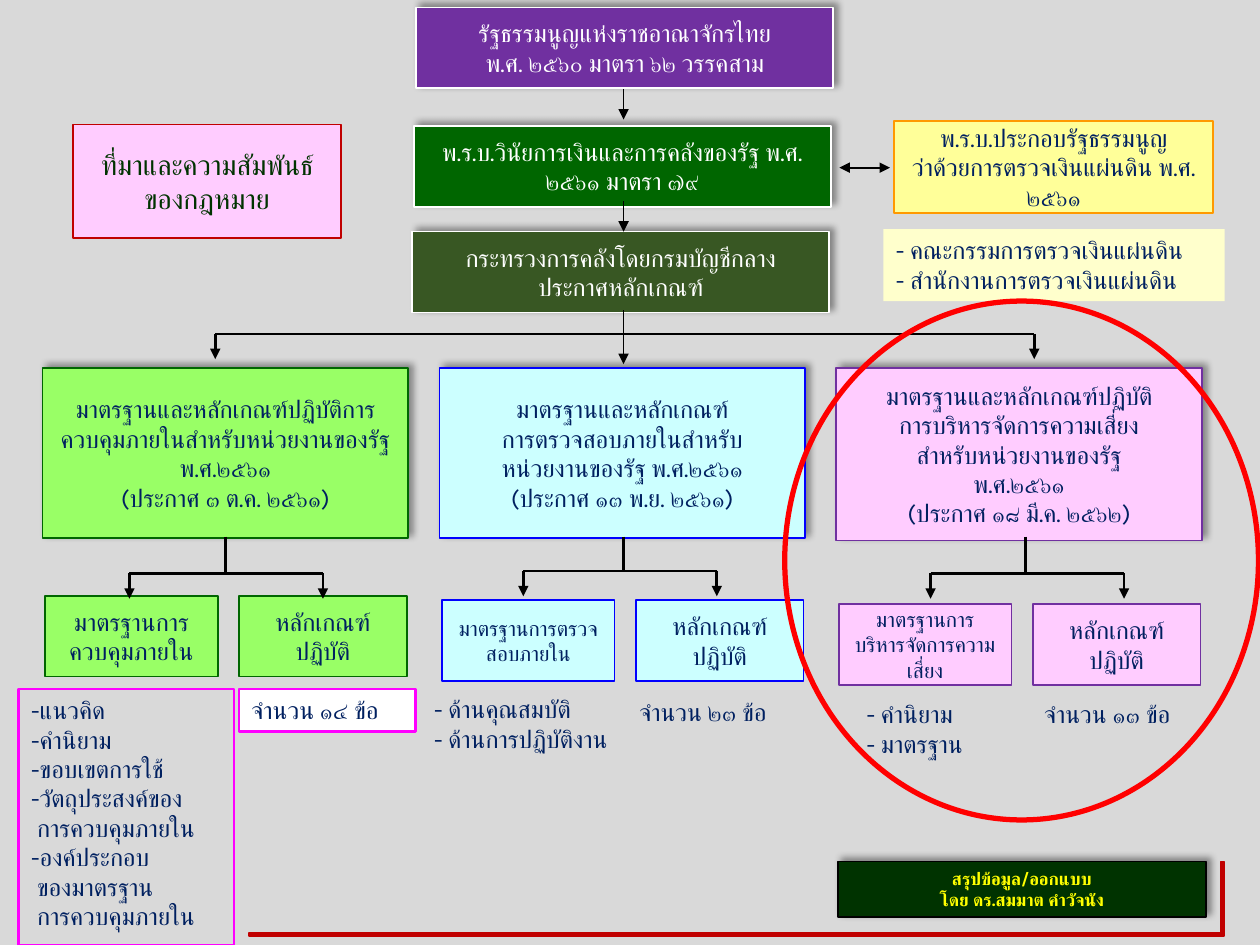
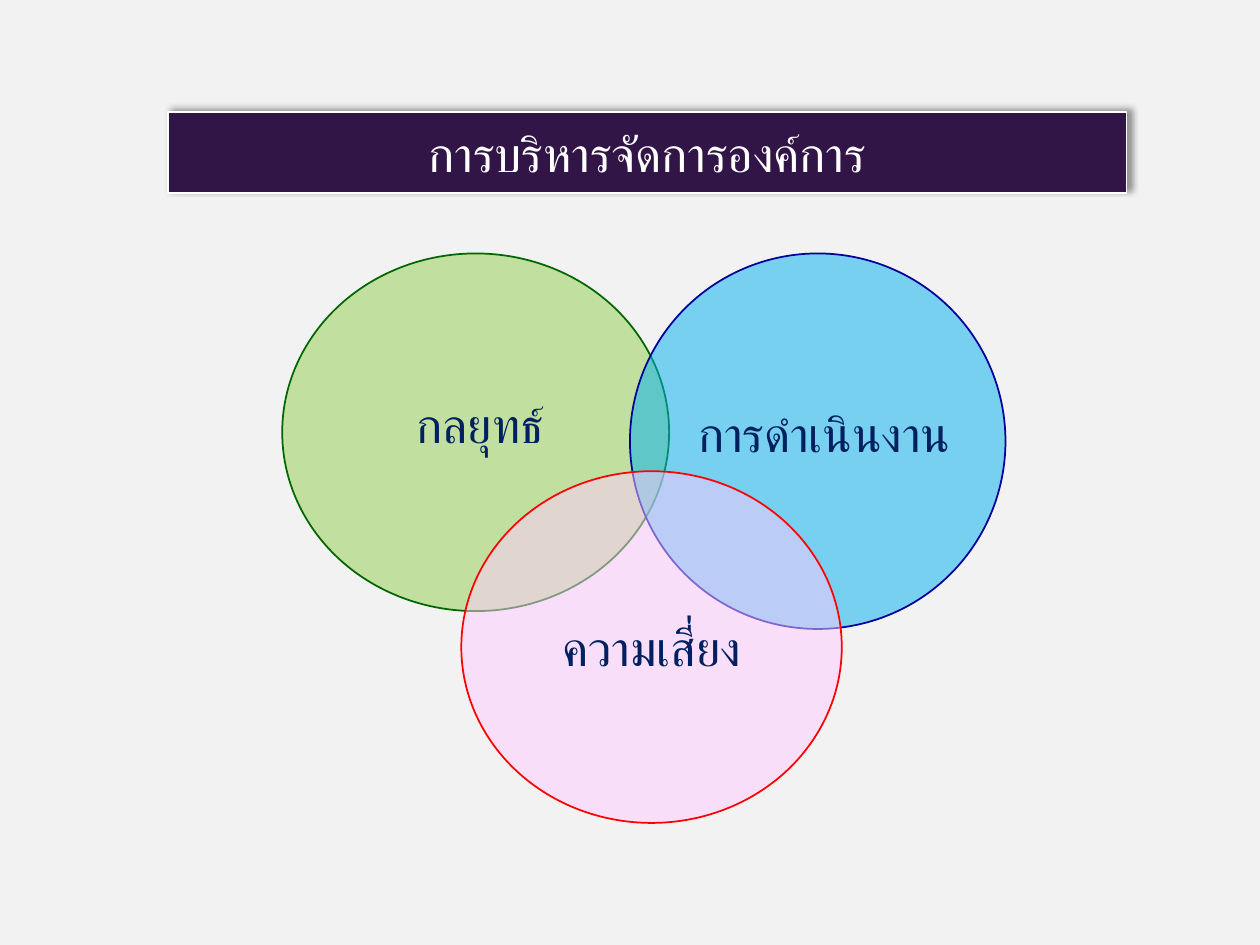
from lxml import etree
from pptx import Presentation
from pptx.dml.color import RGBColor
from pptx.enum.shapes import MSO_CONNECTOR, MSO_SHAPE as SHAPE
from pptx.enum.text import MSO_ANCHOR as ANCHOR, MSO_AUTO_SIZE, PP_ALIGN as ALIGN
from pptx.oxml.ns import qn
from pptx.util import Cm, Pt

FONT = "Karla"
TITLE_ONLY = 5
BLACK = RGBColor(0x00, 0x00, 0x00)
WHITE = RGBColor(0xFF, 0xFF, 0xFF)
GREY = RGBColor(0xD9, 0xD9, 0xD9)
PALE_GREY = RGBColor(0xF2, 0xF2, 0xF2)
NAVY = RGBColor(0x00, 0x20, 0x60)
BLUE = RGBColor(0x00, 0x00, 0xFF)
DARK_BLUE = RGBColor(0x00, 0x00, 0x99)
SKY = RGBColor(0x00, 0xB0, 0xF0)
PALE_CYAN = RGBColor(0xCC, 0xFF, 0xFF)
GREEN = RGBColor(0x00, 0x66, 0x00)
DARK_GREEN = RGBColor(0x00, 0x33, 0x00)
OLIVE = RGBColor(0x38, 0x57, 0x23)
LIME = RGBColor(0x99, 0xFF, 0x66)
LEAF = RGBColor(0x92, 0xD0, 0x50)
PURPLE = RGBColor(0x70, 0x30, 0xA0)
PLUM = RGBColor(0x32, 0x15, 0x47)
PINK = RGBColor(0xFF, 0xCC, 0xFF)
MAGENTA = RGBColor(0xFF, 0x00, 0xFF)
RED = RGBColor(0xFF, 0x00, 0x00)
DARK_RED = RGBColor(0xC0, 0x00, 0x00)
ORANGE = RGBColor(0xFF, 0x99, 0x00)
YELLOW = RGBColor(0xFF, 0xFF, 0x00)
LIGHT_YELLOW = RGBColor(0xFF, 0xFF, 0x99)
CREAM = RGBColor(0xFF, 0xFF, 0xCC)

CENTRE_X = 12.57
COLUMN_LEFT, COLUMN_PITCH, COLUMN_WIDTH, COLUMN_TOP = 0.86, 8.0, 7.37, 7.42
CHILD_HEIGHT, FORK_WIDTH, FORK_DROP = 1.63, 3.9, 0.51

COLUMNS = [
    dict(
        fill=LIME, line=GREEN, height=3.43, trunk=3.68, fork=1.75, bar=11.56,
        child_top=12.01, size=14,
        head="มาตรฐานและหลักเกณฑ์ปฏิบัติการควบคุมภายในสำหรับหน่วยงานของรัฐ พ.ศ.๒๕๖๑\n"
             "(ประกาศ ๓ ต.ค. ๒๕๖๑)",
        standard="มาตรฐานการควบคุมภายใน",
        notes="-แนวคิด\n-คำนิยาม\n-ขอบเขตการใช้\n-วัตถุประสงค์ของ\n การควบคุมภายใน\n"
              "-องค์ประกอบ\n ของมาตรฐาน\n การควบคุมภายใน",
        notes_box=(-0.48, 13.89, 4.34, 5.16), notes_line=MAGENTA,
        count="จำนวน ๑๔ ข้อ", count_box=(3.96, 13.89, 3.56, 0.86), count_fill=WHITE),
    dict(
        fill=PALE_CYAN, line=BLUE, height=3.43, trunk=3.71, fork=1.69, bar=11.51,
        child_top=12.1, size=12,
        head="มาตรฐานและหลักเกณฑ์\nการตรวจสอบภายในสำหรับ\n"
             "หน่วยงานของรัฐ พ.ศ.๒๕๖๑\n(ประกาศ ๑๓ พ.ย. ๒๕๖๑)",
        standard="มาตรฐานการตรวจสอบภายใน",
        notes="- ด้านคุณสมบัติ\n- ด้านการปฏิบัติงาน",
        notes_box=(-0.36, 13.87, 4.62, 1.5), notes_line=None,
        count="จำนวน ๒๓ ข้อ", count_box=(3.78, 13.92, 3.58, 0.86), count_fill=None),
    dict(
        fill=PINK, line=PURPLE, height=3.48, trunk=3.81, fork=1.9, bar=11.56,
        child_top=12.18, size=12,
        head="มาตรฐานและหลักเกณฑ์ปฏิบัติ\nการบริหารจัดการความเสี่ยง\n"
             "สำหรับหน่วยงานของรัฐ\nพ.ศ.๒๕๖๑\n(ประกาศ ๑๘ มี.ค. ๒๕๖๒)",
        standard="มาตรฐานการบริหารจัดการความเสี่ยง",
        notes="- คำนิยาม\n- มาตรฐาน",
        notes_box=(0.36, 13.97, 2.79, 1.5), notes_line=None,
        count="จำนวน ๑๓ ข้อ", count_box=(3.94, 13.97, 3.71, 0.86), count_fill=None),
]


def add_shadow(sp):
    """Give a shape the soft shadow that falls to the upper right."""
    effects = sp._element.spPr.find(qn("a:effectLst"))
    outer = etree.SubElement(effects, qn("a:outerShdw"), blurRad="50800", dist="38100",
                             dir="18900000", algn="bl", rotWithShape="0")
    color = etree.SubElement(outer, qn("a:srgbClr"), val="000000")
    etree.SubElement(color, qn("a:alpha"), val="40000")


def paint(sp, fill=None, line=None, width=1, shadow=False):
    """Set fill, outline and shadow of a shape."""
    if fill is None:
        sp.fill.background()
    else:
        sp.fill.solid()
        sp.fill.fore_color.rgb = fill
    if line is None:
        sp.line.fill.background()
    else:
        sp.line.color.rgb = line
        sp.line.width = Pt(width)
    sp.shadow.inherit = False
    if shadow:
        add_shadow(sp)


def write(sp, text, size=14, color=NAVY, align=ALIGN.CENTER, anchor=ANCHOR.MIDDLE, bold=False):
    """Fill a shape with text, one paragraph for each line."""
    tf = sp.text_frame
    tf.text = text
    tf.word_wrap = True
    tf.auto_size = MSO_AUTO_SIZE.NONE
    tf.vertical_anchor = anchor
    for p in tf.paragraphs:
        p.alignment = align
        for r in p.runs:
            r.font.name = FONT
            r.font.size = Pt(size)
            r.font.bold = bold
            r.font.color.rgb = color
            etree.SubElement(r._r.get_or_add_rPr(), qn("a:cs"), typeface=FONT)


def add_box(s, box, fill=None, line=None, kind=SHAPE.RECTANGLE, width=1, shadow=False):
    """Add a painted preset shape at a box given in centimetres."""
    sp = s.shapes.add_shape(kind, *map(Cm, box))
    paint(sp, fill, line, width, shadow)
    return sp


def add_note(s, box, text, fill=None, line=None):
    """Add a left-aligned list that starts at the top of its box."""
    sp = add_box(s, box, fill, line, width=1.5)
    write(sp, text, align=ALIGN.LEFT, anchor=ANCHOR.TOP)


def add_line(s, x1, y1, x2, y2, width=1.5, ends=()):
    """Add a black line with arrowheads at the named ends."""
    cxn = s.shapes.add_connector(MSO_CONNECTOR.STRAIGHT, *map(Cm, (x1, y1, x2, y2)))
    cxn.line.color.rgb = BLACK
    cxn.line.width = Pt(width)
    for end in ends:
        etree.SubElement(cxn.get_or_add_ln(), qn(f"a:{end}"), type="triangle")
    etree.SubElement(cxn._element.spPr, qn("a:effectLst"))


def add_fork(s, left, right, bar, drop=FORK_DROP):
    """Add a bar with an arrow down from each end."""
    add_line(s, left, bar, right, bar)
    for x in (left, right):
        add_line(s, x, bar, x, bar + drop, ends=["tailEnd"])


def format_title(s, box, geometry, adjustments, text, size, color, fill, line, shadow=False):
    """Move the title placeholder and give it a preset outline."""
    sp = s.shapes.title
    sp.left, sp.top, sp.width, sp.height = map(Cm, box)
    geom = etree.Element(qn("a:prstGeom"), prst=geometry)
    guides = etree.SubElement(geom, qn("a:avLst"))
    for name, value in adjustments.items():
        etree.SubElement(guides, qn("a:gd"), name=name, fmla=f"val {value}")
    sp._element.spPr.insert(1, geom)
    paint(sp, fill, line, shadow=shadow)
    write(sp, text, size, color)


def add_law_chain(s, left, top):
    """Stack the constitution, the act and the ministry with arrows between."""
    laws = [
        (0.08, 0, PURPLE, "รัฐธรรมนูญแห่งราชอาณาจักรไทย\nพ.ศ. ๒๕๖๐ มาตรา ๖๒ วรรคสาม"),
        (0.03, 2.39, GREEN, "พ.ร.บ.วินัยการเงินและการคลังของรัฐ พ.ศ. ๒๕๖๑ มาตรา ๗๙"),
        (0, 4.52, OLIVE, "กระทรวงการคลังโดยกรมบัญชีกลาง\nประกาศหลักเกณฑ์"),
    ]
    for dx, dy, fill, text in laws:
        sp = add_box(s, (left + dx, top + dy, 8.41, 1.63), fill, WHITE, shadow=True)
        write(sp, text, color=WHITE)
    for start, end in ((1.65, 2.26), (3.91, 4.52), (6.1, 7.19)):
        add_line(s, CENTRE_X, top + start, CENTRE_X, top + end, 1, ["tailEnd"])
    add_fork(s, 4.34, 20.85, top + 6.58)


def add_audit_law(s, left, top):
    """Place the audit act, its two bodies and the two-way arrow."""
    act = add_box(s, (left + 1.11, top, 6.43, 1.85), LIGHT_YELLOW, ORANGE)
    write(act, "พ.ร.บ.ประกอบรัฐธรรมนูญ\nว่าด้วยการตรวจเงินแผ่นดิน พ.ศ. ๒๕๖๑")
    add_note(s, (left + 0.89, top + 2.18, 6.88, 1.45),
             "- คณะกรรมการตรวจเงินแผ่นดิน\n- สำนักงานการตรวจเงินแผ่นดิน", CREAM)
    add_line(s, left, top + 0.94, left + 1.02, top + 0.94, 1, ["headEnd", "tailEnd"])


def add_column(s, left, top, col):
    """Place one set of rules with its fork, two children and notes."""
    colors = col["fill"], col["line"]
    head = add_box(s, (left, top, COLUMN_WIDTH, col["height"]), *colors, shadow=True)
    write(head, col["head"])
    children = [(0.05, 3.48, col["standard"], col["size"]), (3.96, 3.38, "หลักเกณฑ์ปฏิบัติ", 14)]
    for dx, width, text, size in children:
        child = add_box(s, (left + dx, col["child_top"], width, CHILD_HEIGHT), *colors)
        write(child, text, size)
    trunk, fork = left + col["trunk"], left + col["fork"]
    add_line(s, trunk, top + 3.4, trunk, col["bar"])
    add_fork(s, fork, fork + FORK_WIDTH, col["bar"])
    for key, fill, line in (("notes", None, col["notes_line"]),
                            ("count", col["count_fill"], col["count_fill"] and MAGENTA)):
        dx, y, width, height = col[f"{key}_box"]
        add_note(s, (left + dx, y, width, height), col[key], fill, line)


def add_credit(s, left, top):
    """Place the author plate inside the red corner rule."""
    plate = add_box(s, (left + 11.87, top, 7.42, 1.12), DARK_GREEN, BLACK, shadow=True)
    write(plate, "สรุปข้อมูล/ออกแบบ\nโดย ดร.สมมาต คำวัจนัง", 10, YELLOW, bold=True)
    right, bottom, thick = left + 19.66, top + 1.5, 0.06
    outline = [(right, top), (right, bottom), (left, bottom), (left, bottom - thick),
               (right - thick, bottom - thick), (right - thick, top)]
    points = [(Cm(x), Cm(y)) for x, y in outline]
    builder = s.shapes.build_freeform(*points[0])
    builder.add_line_segments(points[1:], close=True)
    paint(builder.convert_to_shape(), DARK_RED, DARK_RED)


def build_law_slide(prs):
    """Build the chart of laws and the rules that follow from them."""
    s = prs.slides.add_slide(prs.slide_layouts[TITLE_ONLY])
    format_title(s, (1.47, 2.51, 5.41, 2.29), "wedgeRoundRectCallout",
                 {"adj1": 74200, "adj2": -18900, "adj3": 16700},
                 "ที่มาและความสัมพันธ์\nของกฎหมาย", 16, DARK_GREEN, PINK, DARK_RED)
    for i, col in enumerate(COLUMNS):
        add_column(s, COLUMN_LEFT + i * COLUMN_PITCH, COLUMN_TOP, col)
    add_law_chain(s, 8.31, 0.15)
    add_audit_law(s, 16.92, 2.44)
    add_credit(s, 5.02, 17.37)
    add_box(s, (15.82, 6.07, 9.55, 10.46), None, RED, SHAPE.OVAL, 3)


def add_venn(s, left, top):
    """Place three see-through circles and their labels."""
    circles = [
        ((0, 0, 7.8, 7.21), LEAF, GREEN, "กลยุทธ์", (2.21, 2.72, 3.56, 1.45)),
        ((7.01, 0, 7.57, 7.57), SKY, DARK_BLUE, "การดำเนินงาน", (7.8, 2.9, 6.25, 1.45)),
        ((3.61, 4.39, 7.67, 7.09), PINK, RED, "ความเสี่ยง", (5.1, 7.21, 4.7, 1.45)),
    ]
    for (x, y, w, h), fill, line, _, _ in circles:
        sp = add_box(s, (left + x, top + y, w, h), fill, line, SHAPE.OVAL)
        color = sp._element.spPr.find(qn("a:solidFill"))[0]
        etree.SubElement(color, qn("a:alpha"), val="50000")
    for _, _, _, text, (x, y, w, h) in circles:
        label = s.shapes.add_textbox(*map(Cm, (left + x, top + y, w, h)))
        write(label, text, 28, anchor=ANCHOR.TOP)


def build_venn_slide(prs):
    """Build the slide on the three sides of managing an organisation."""
    s = prs.slides.add_slide(prs.slide_layouts[TITLE_ONLY])
    s.background.fill.solid()
    s.background.fill.fore_color.rgb = PALE_GREY
    format_title(s, (3.38, 2.26, 19.33, 1.63), "roundRect", {"adj": 16667},
                 "การบริหารจัดการองค์การ", 28, WHITE, PLUM, WHITE, shadow=True)
    add_venn(s, 5.69, 5.11)


def main():
    """Build and save the two slides."""
    prs = Presentation()
    prs.slide_width, prs.slide_height = Cm(25.4), Cm(19.05)
    background = prs.slide_master.background.fill
    background.solid()
    background.fore_color.rgb = GREY
    build_law_slide(prs)
    build_venn_slide(prs)
    prs.save("out.pptx")


if __name__ == "__main__":
    main()
